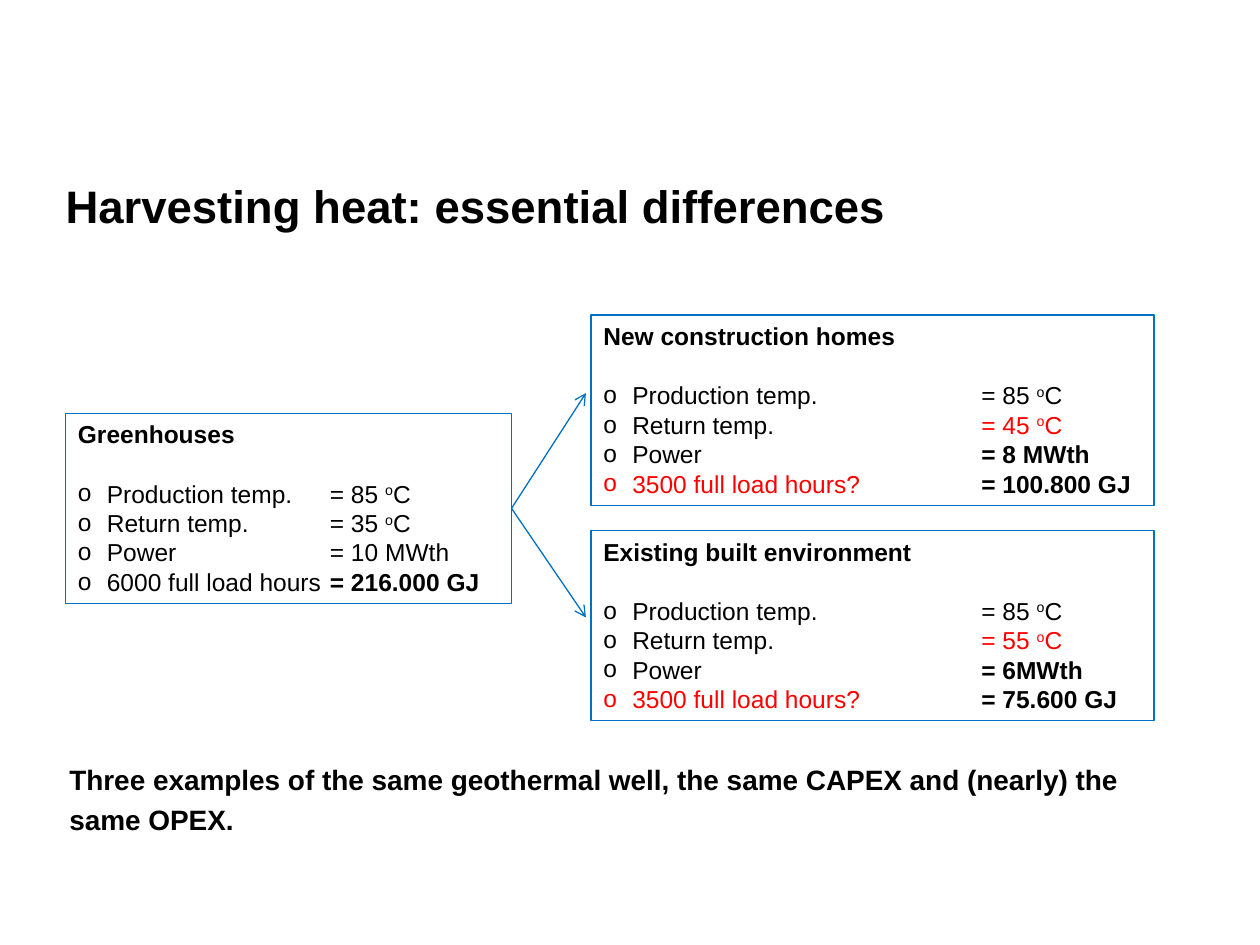
from dataclasses import dataclass

from lxml.etree import SubElement
from pptx import Presentation
from pptx.dml.color import RGBColor
from pptx.enum.shapes import MSO_CONNECTOR as Connector, MSO_SHAPE as Shape
from pptx.enum.text import MSO_ANCHOR as Anchor, PP_ALIGN as Align
from pptx.oxml.ns import qn
from pptx.util import Inches, Pt


@dataclass(frozen=True)
class Theme:
    font: str = "Arial"
    ink: RGBColor = RGBColor(0, 0, 0)
    alert: RGBColor = RGBColor(0xFF, 0, 0)
    outline: RGBColor = RGBColor(0x00, 0x70, 0xC0)
    title_size: int = 26
    note_size: int = 16
    card_size: int = 14
    line_width: float = 0.75
    heading_gap: int = 17


@dataclass(frozen=True)
class Row:
    label: str
    value: str
    degrees: bool = False
    bold_value: bool = False
    alert_label: bool = False
    alert_value: bool = False


@dataclass(frozen=True)
class Card:
    heading: str
    left: float
    top: float
    width: float
    value_tab: float
    rows: tuple[Row, ...]


THEME = Theme()
CARD_HEIGHT = 1.51
ROW_INDENT = 0.23


def home_rows(return_temp: str, power: str, energy: str) -> tuple[Row, ...]:
    return (
        Row("Production temp.", "= 85 ", degrees=True),
        Row("Return temp.", return_temp, degrees=True, alert_value=True),
        Row("Power", power, bold_value=True),
        Row("3500 full load hours?", energy, bold_value=True, alert_label=True),
    )


GREENHOUSES = Card("Greenhouses", 0.52, 3.28, 3.54, 2, (
    Row("Production temp.", "= 85 ", degrees=True),
    Row("Return temp.", "= 35 ", degrees=True),
    Row("Power", "= 10 MWth"),
    Row("6000 full load hours", "= 216.000 GJ", bold_value=True),
))
NEW_HOMES = Card("New construction homes", 4.69, 2.5, 4.47, 3,
                 home_rows("= 45 ", "= 8 MWth", "= 100.800 GJ"))
EXISTING_HOMES = Card("Existing built environment", 4.69, 4.21, 4.47, 3,
                      home_rows("= 55 ", "= 6MWth", "= 75.600 GJ"))


def add_run(paragraph, text: str, size: int, bold: bool = False,
            color: RGBColor = THEME.ink, raised: bool = False) -> None:
    run = paragraph.add_run()
    run.text = text
    font = run.font
    font.name, font.size, font.bold = THEME.font, Pt(size), bold
    font.color.rgb = color
    if raised:
        font._element.set("baseline", "30000")


def clear_margins(frame) -> None:
    frame.margin_left = frame.margin_right = 0
    frame.margin_top = frame.margin_bottom = 0


def format_row(paragraph, value_tab: float) -> None:
    """Give a row its hanging bullet and the tab stop for its value."""
    properties = paragraph._p.get_or_add_pPr()
    properties.set("marL", str(Inches(ROW_INDENT)))
    properties.set("indent", str(-Inches(ROW_INDENT)))
    SubElement(properties, qn("a:buFont"), typeface=THEME.font)
    SubElement(properties, qn("a:buChar"), char="o")
    tabs = SubElement(properties, qn("a:tabLst"))
    SubElement(tabs, qn("a:tab"), pos=str(Inches(value_tab)), algn="l")


def add_card(slide, card: Card) -> None:
    box = slide.shapes.add_shape(
        Shape.RECTANGLE, Inches(card.left), Inches(card.top),
        Inches(card.width), Inches(CARD_HEIGHT))
    box.shadow.inherit = False
    box.fill.background()
    box.line.color.rgb = THEME.outline
    box.line.width = Pt(THEME.line_width)
    frame = box.text_frame
    frame.word_wrap = True
    frame.vertical_anchor = Anchor.TOP

    heading = frame.paragraphs[0]
    heading.alignment = Align.LEFT
    heading.space_after = Pt(THEME.heading_gap)
    add_run(heading, card.heading, THEME.card_size, bold=True)

    for row in card.rows:
        paragraph = frame.add_paragraph()
        paragraph.alignment = Align.LEFT
        format_row(paragraph, card.value_tab)
        label_color = THEME.alert if row.alert_label else THEME.ink
        value_color = THEME.alert if row.alert_value else THEME.ink
        add_run(paragraph, row.label + "\t", THEME.card_size, color=label_color)
        add_run(paragraph, row.value, THEME.card_size, row.bold_value, value_color)
        if row.degrees:
            add_run(paragraph, "o", THEME.card_size, color=value_color, raised=True)
            add_run(paragraph, "C", THEME.card_size, color=value_color)


def add_arrow(slide, start: tuple[float, float], end: tuple[float, float]) -> None:
    arrow = slide.shapes.add_connector(
        Connector.STRAIGHT, *map(Inches, start), *map(Inches, end))
    arrow.line.color.rgb = THEME.outline
    arrow.line.width = Pt(THEME.line_width)
    SubElement(arrow.line._get_or_add_ln(), qn("a:tailEnd"), type="arrow")
    SubElement(arrow._element.spPr, qn("a:effectLst"))


def add_title(slide, text: str) -> None:
    title = slide.shapes.title
    title.left, title.top = Inches(0.52), Inches(1.39)
    title.width, title.height = Inches(9), Inches(0.46)
    frame = title.text_frame
    clear_margins(frame)
    frame.vertical_anchor = Anchor.BOTTOM
    paragraph = frame.paragraphs[0]
    paragraph.alignment = Align.LEFT
    paragraph.line_spacing = 1.5
    add_run(paragraph, text, THEME.title_size, bold=True)


def add_note(slide, text: str) -> None:
    note = slide.shapes.add_textbox(Inches(0.55), Inches(6), Inches(8.52), Inches(0.79))
    frame = note.text_frame
    frame.word_wrap = True
    clear_margins(frame)
    paragraph = frame.paragraphs[0]
    paragraph.line_spacing = 1.2
    add_run(paragraph, text, THEME.note_size, bold=True)


def main() -> None:
    deck = Presentation()
    deck.slide_width, deck.slide_height = Inches(10), Inches(7.5)
    slide = deck.slides.add_slide(deck.slide_layouts[5])

    add_title(slide, "Harvesting heat: essential differences")
    for card in (GREENHOUSES, NEW_HOMES, EXISTING_HOMES):
        add_card(slide, card)
    fork = (GREENHOUSES.left + GREENHOUSES.width, GREENHOUSES.top + CARD_HEIGHT / 2)
    for tip in ((4.65, 3.12), (4.65, 4.9)):
        add_arrow(slide, fork, tip)
    add_note(slide, "Three examples of the same geothermal well, the same CAPEX "
                    "and (nearly) the same OPEX.")
    deck.save("out.pptx")


if __name__ == "__main__":
    main()
